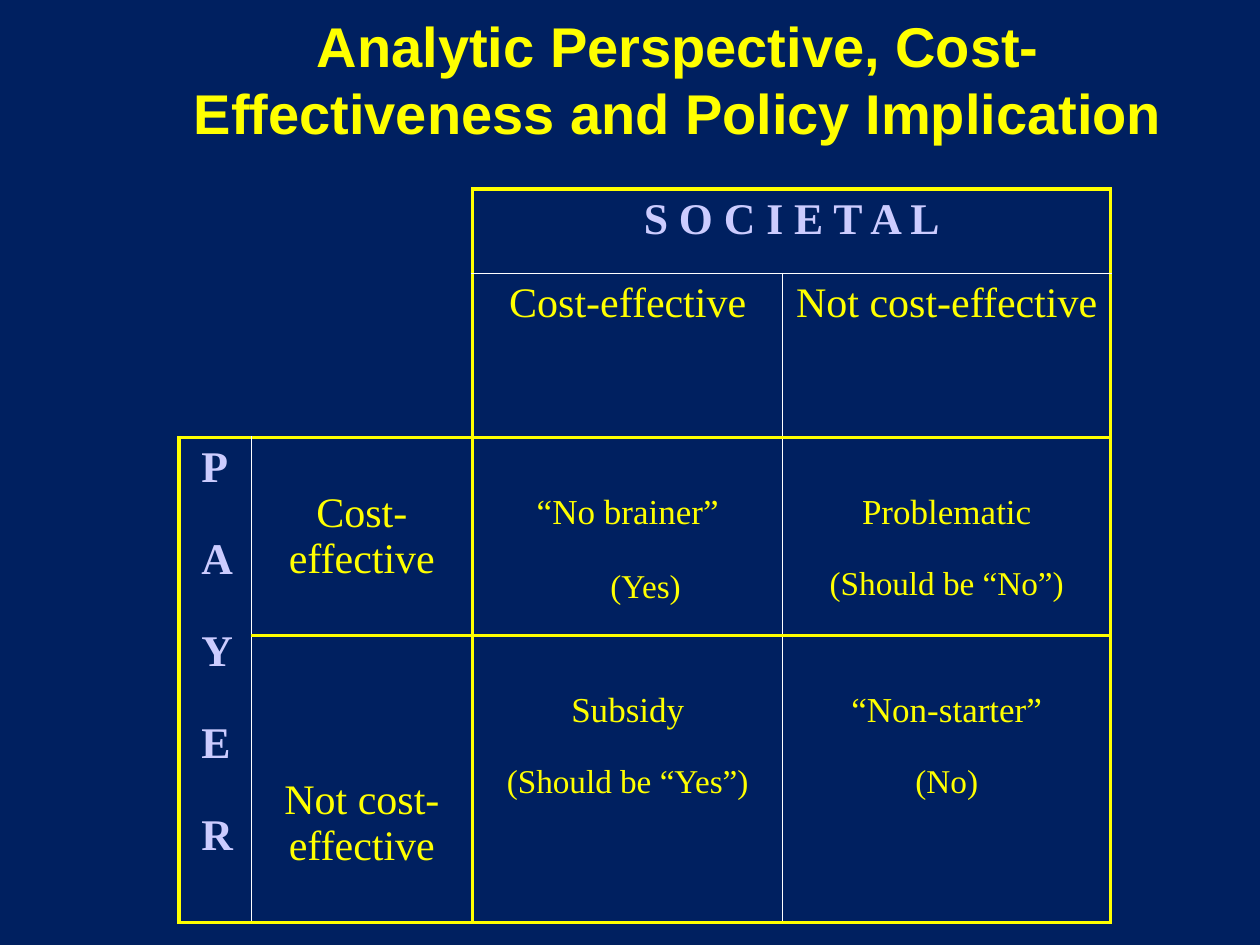
from lxml.etree import SubElement
from pptx import Presentation
from pptx.dml.color import RGBColor
from pptx.enum.text import MSO_ANCHOR as Anchor, MSO_AUTO_SIZE as AutoSize, PP_ALIGN as Align
from pptx.oxml.ns import qn
from pptx.util import Cm, Pt

THEME = {
    "background": "002060", "text": "FFFF00", "axis": "CCCCFF",
    "title_font": "Arial", "table_font": "Times New Roman",
    "title": 32, "axis_size": 25, "label": 24, "verdict": 20, "answer": 19,
    "lines": {"thick": ("FFFF00", 2.25), "middle": ("FFFF00", 1.5), "thin": ("FFFFFF", 0.5)},
}
STYLES = {
    "axis": {"size": THEME["axis_size"], "color": THEME["axis"], "bold": True},
    "label": {"size": THEME["label"], "color": THEME["text"], "bold": False},
    "verdict": {"size": THEME["verdict"], "color": THEME["text"], "bold": False},
    "answer": {"size": THEME["answer"], "color": THEME["text"], "bold": False},
}
GAPS = {"axis": Pt(25), "answer": Pt(19)}

TITLE = "Analytic Perspective, Cost-Effectiveness and Policy Implication"
TITLE_PLACE = {"left": 3.07, "top": 0, "width": 21.21, "height": 3.18}
TABLE_ORIGIN = (3.61, 3.81)
COLUMNS = [1.45, 4.47, 6.25, 6.61]
ROWS = [1.7, 3.31, 3.99, 5.79]
MERGES = [((0, 0), (1, 0)), ((0, 1), (1, 1)), ((0, 2), (0, 3)), ((2, 0), (3, 0))]

MIDDLE = {"vertical_anchor": Anchor.MIDDLE}
VERDICT = {"margin_top": Cm(1.13)}
CELLS = {
    (0, 2): ([("S O C I E T A L", "axis")], {}),
    (1, 2): ([("Cost-effective", "label")], {}),
    (1, 3): ([("Not cost-effective", "label")], {}),
    (2, 0): ([(letter, "axis") for letter in "PAYER"], {"margin_left": Cm(0.45)}),
    (2, 1): ([("Cost-effective", "label")], MIDDLE),
    (2, 2): ([("“No brainer”", "verdict"), ("(Yes)", "answer")], VERDICT),
    (2, 3): ([("Problematic", "verdict"), ("(Should be “No”)", "answer")], VERDICT),
    (3, 1): ([("Not cost-effective", "label")], {**MIDDLE, "margin_top": Cm(1.92)}),
    (3, 2): ([("Subsidy", "verdict"), ("(Should be “Yes”)", "answer")], VERDICT),
    (3, 3): ([("“Non-starter”", "verdict"), ("(No)", "answer")], VERDICT),
}
SHIFTED = {"(Yes)": {"indent": Cm(0.72), "gap": Pt(21)}}

HORIZONTAL_RULES = [
    (0, 2, 4, "thick"), (1, 2, 4, "thin"), (2, 0, 4, "thick"),
    (3, 1, 4, "middle"), (4, 0, 4, "thick"),
]
VERTICAL_RULES = [
    (0, 2, 4, "thick"), (1, 2, 4, "thin"), (2, 0, 4, "thick"),
    (3, 1, 4, "thin"), (4, 0, 4, "thick"),
]


def set_values(target, values):
    for name, value in values.items():
        setattr(target, name, value)


def add_text(para, text, font, size, color, bold):
    span = para.add_run()
    span.text = text
    set_values(span.font, {"name": font, "size": Pt(size), "bold": bold})
    span.font.color.rgb = RGBColor.from_string(color)


def fill_cell(cell, lines, options):
    set_values(cell, options)
    for index, (text, style) in enumerate(lines):
        frame = cell.text_frame
        para = frame.add_paragraph() if index else frame.paragraphs[0]
        para.alignment = Align.LEFT if len(text) == 1 else Align.CENTER
        if index:
            para.space_before = GAPS[style]
        if text in SHIFTED:
            para.space_before = SHIFTED[text]["gap"]
            para._p.get_or_add_pPr().set("marL", str(SHIFTED[text]["indent"]))
        add_text(para, text, THEME["table_font"], **STYLES[style])


def collect_borders():
    owners = {}
    for (top, left), (bottom, right) in MERGES:
        for row in range(top, bottom + 1):
            for column in range(left, right + 1):
                owners[row, column] = (top, left)
    borders = {(row, column): {} for row in range(len(ROWS)) for column in range(len(COLUMNS))}

    def mark(place, side, kind):
        if place in borders:
            for target in {place, owners.get(place, place)}:
                borders[target][side] = kind

    for row, start, end, kind in HORIZONTAL_RULES:
        for column in range(start, end):
            mark((row - 1, column), "B", kind)
            mark((row, column), "T", kind)
    for column, start, end, kind in VERTICAL_RULES:
        for row in range(start, end):
            mark((row, column - 1), "R", kind)
            mark((row, column), "L", kind)
    return borders


def draw_borders(cell, sides):
    properties = cell._tc.get_or_add_tcPr()
    for index, side in enumerate("LRTB"):
        line = SubElement(properties, qn(f"a:ln{side}"))
        properties.insert(index, line)
        if side in sides:
            color, width = THEME["lines"][sides[side]]
            line.set("w", str(Pt(width)))
            fill = SubElement(line, qn("a:solidFill"))
            SubElement(fill, qn("a:srgbClr")).set("val", color)
        else:
            SubElement(line, qn("a:noFill"))


def add_title(page):
    box = page.shapes.title
    set_values(box, {name: Cm(value) for name, value in TITLE_PLACE.items()})
    set_values(box.text_frame, {
        "word_wrap": True, "auto_size": AutoSize.NONE, "vertical_anchor": Anchor.MIDDLE,
    })
    para = box.text_frame.paragraphs[0]
    para.alignment = Align.CENTER
    add_text(para, TITLE, THEME["title_font"], THEME["title"], THEME["text"], True)


def add_matrix(page):
    left, top = TABLE_ORIGIN
    table = page.shapes.add_table(
        len(ROWS), len(COLUMNS), Cm(left), Cm(top), Cm(sum(COLUMNS)), Cm(sum(ROWS))
    ).table
    set_values(table, {"first_row": False, "horz_banding": False})
    for column, width in zip(table.columns, COLUMNS):
        column.width = Cm(width)
    for row, height in zip(table.rows, ROWS):
        row.height = Cm(height)
    for first, last in MERGES:
        table.cell(*first).merge(table.cell(*last))
    for place, sides in collect_borders().items():
        cell = table.cell(*place)
        cell.fill.background()
        draw_borders(cell, sides)
    for place, (lines, options) in CELLS.items():
        fill_cell(table.cell(*place), lines, options)


def main():
    deck = Presentation()
    set_values(deck, {"slide_width": Cm(25.4), "slide_height": Cm(19.05)})
    page = deck.slides.add_slide(deck.slide_layouts[5])
    page.background.fill.solid()
    page.background.fill.fore_color.rgb = RGBColor.from_string(THEME["background"])
    add_title(page)
    add_matrix(page)
    deck.save("out.pptx")


if __name__ == "__main__":
    main()
